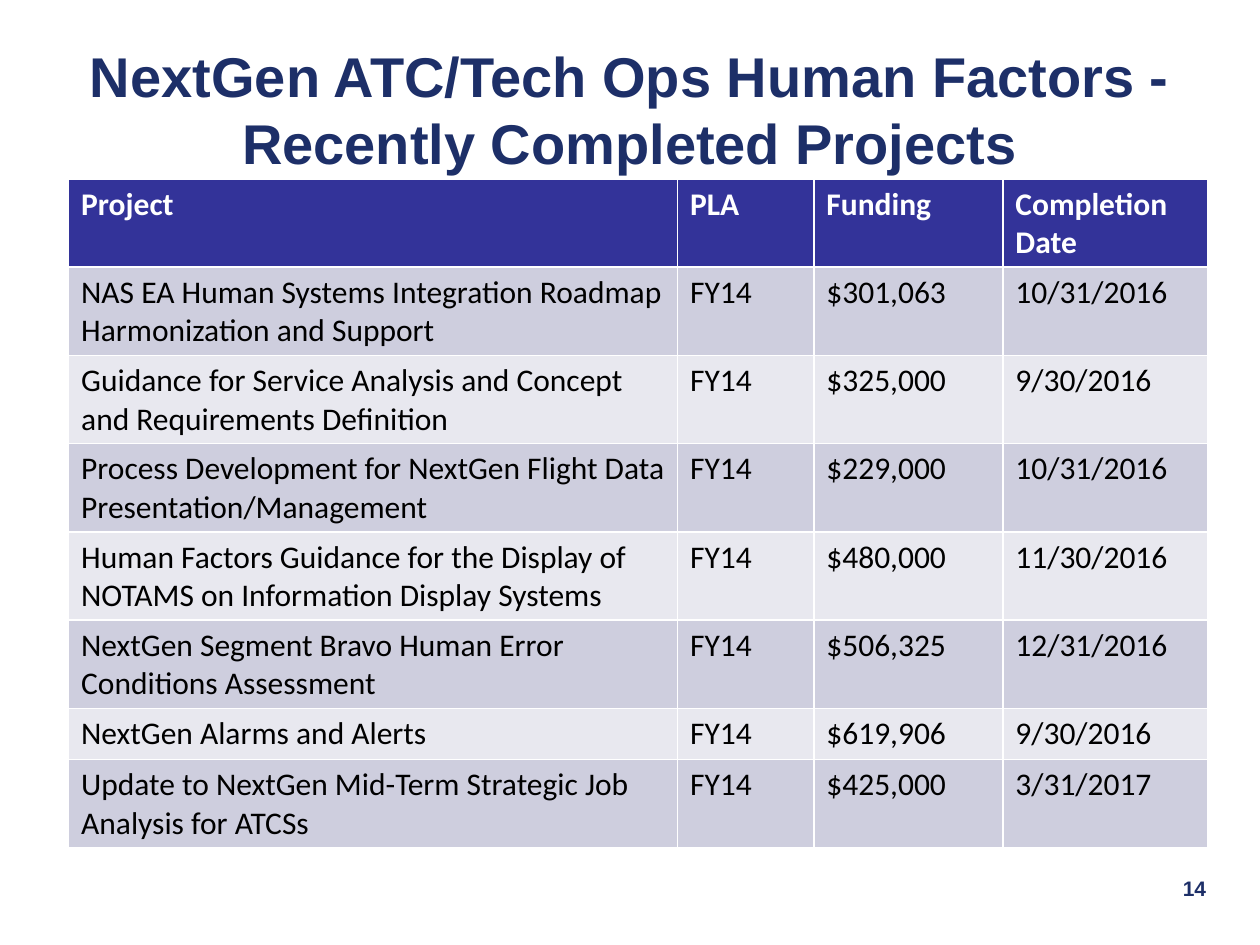
import pptx
import pptx.util
import pptx.dml.color
import pptx.enum.text

Pt = pptx.util.Pt
COLORS = {
    "navy": "1D2F68",
    "header": "333399",
    "odd": "CECEDE",
    "even": "E8E8EF",
    "white": "FFFFFF",
    "black": "000000",
}


def rgb(name):
    return pptx.dml.color.RGBColor.from_string(COLORS[name])


def format_text(frame, font_name, size, color, bold, align):
    paragraph = frame.paragraphs[0]
    paragraph.alignment = align
    font = paragraph.runs[0].font
    font.name = font_name
    font.size = Pt(size)
    font.bold = bold
    font.color.rgb = rgb(color)


ALIGN = pptx.enum.text.PP_ALIGN
ANCHOR = pptx.enum.text.MSO_ANCHOR

presentation = pptx.Presentation()
presentation.slide_width = Pt(720)
presentation.slide_height = Pt(540)
slide = presentation.slides.add_slide(presentation.slide_layouts[5])

# Page number
page_number = slide.shapes.add_textbox(Pt(546.5), Pt(496.8), Pt(149.8), Pt(36))
page_number.text_frame.word_wrap = True
page_number.text_frame.text = "14"
format_text(page_number.text_frame, "Arial", 12, "navy", True, ALIGN.RIGHT)

# Completed projects
header = ("Project", "PLA", "Funding", "Completion Date")
projects = [
    ("NAS EA Human Systems Integration Roadmap Harmonization and Support", "$301,063", "10/31/2016"),
    ("Guidance for Service Analysis and Concept and Requirements Definition", "$325,000", "9/30/2016"),
    ("Process Development for NextGen Flight Data Presentation/Management", "$229,000", "10/31/2016"),
    ("Human Factors Guidance for the Display of NOTAMS on Information Display Systems",
     "$480,000", "11/30/2016"),
    ("NextGen Segment Bravo Human Error Conditions Assessment", "$506,325", "12/31/2016"),
    ("NextGen Alarms and Alerts", "$619,906", "9/30/2016"),
    ("Update to NextGen Mid-Term Strategic Job Analysis for ATCSs", "$425,000", "3/31/2017"),
]
rows = [header] + [(name, "FY14", funding, done) for name, funding, done in projects]
column_widths = (348, 77.9, 108, 117)

project_frame = slide.shapes.add_table(
    len(rows), len(header), Pt(39.2), Pt(102.2), Pt(sum(column_widths)), Pt(382.3))
project_table = project_frame.table
for column, width in zip(project_table.columns, column_widths):
    column.width = Pt(width)
for row in project_table.rows:
    row.height = Pt(29.2)  # rows grow to fit two-line text
project_frame.height = Pt(382.3)

for r, values in enumerate(rows):
    is_header = r == 0
    fill = "header" if is_header else "odd" if r % 2 else "even"
    for c, value in enumerate(values):
        cell = project_table.cell(r, c)
        cell.fill.solid()
        cell.fill.fore_color.rgb = rgb(fill)
        cell.text_frame.text = value
        format_text(cell.text_frame, "Calibri", 18, "white" if is_header else "black",
                    is_header, ALIGN.LEFT)

# Title
title = slide.shapes.title
title.left, title.top, title.width, title.height = Pt(0), Pt(27.4), Pt(720), Pt(69.1)
title.text_frame.text = "NextGen ATC/Tech Ops Human Factors - Recently Completed Projects"
title.text_frame.word_wrap = True
title.text_frame.vertical_anchor = ANCHOR.MIDDLE
format_text(title.text_frame, "Arial", 32, "navy", True, ALIGN.CENTER)

presentation.save("out.pptx")
